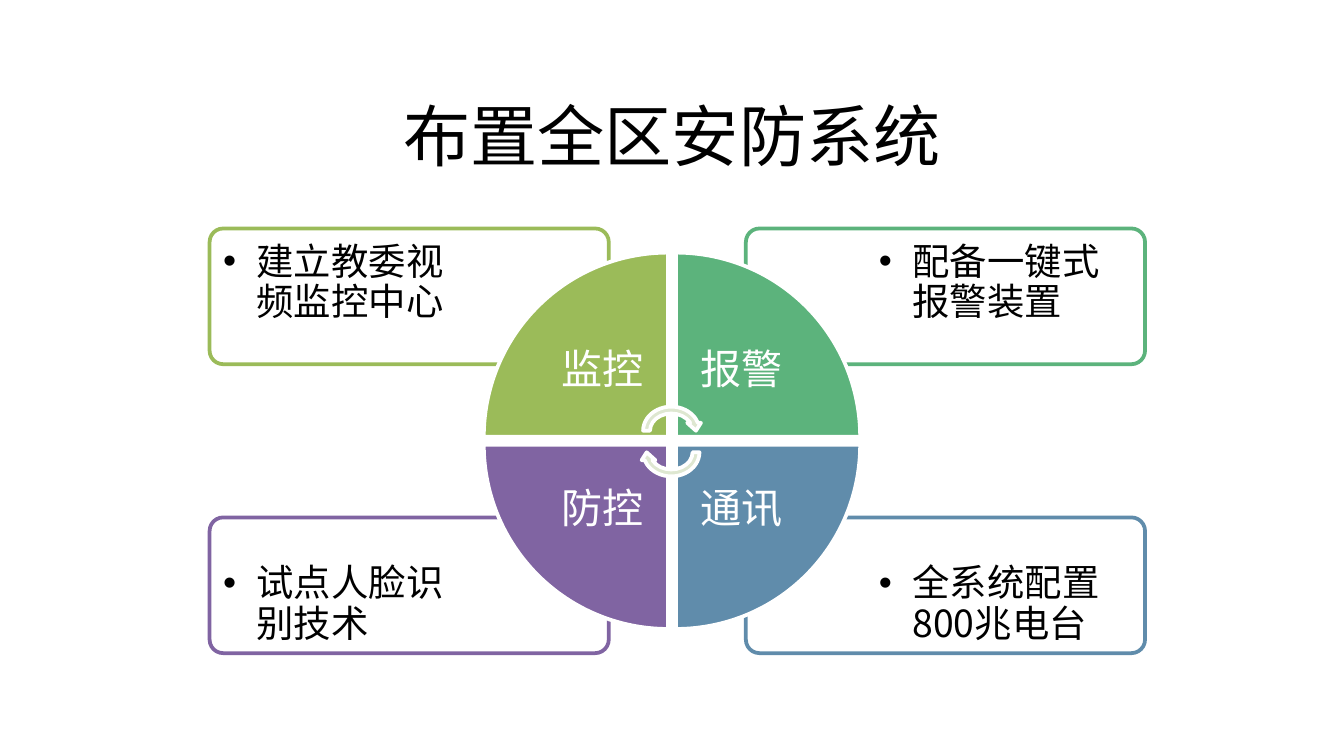
from lxml.etree import SubElement
from pptx import Presentation
from pptx.dml.color import RGBColor
from pptx.enum.shapes import MSO_SHAPE
from pptx.enum.text import MSO_ANCHOR, PP_ALIGN
from pptx.oxml.ns import qn
from pptx.util import Inches, Pt

COLORS = {
    "white": "FFFFFF", "black": "000000", "arrow": "DEE7D1",
    "green": "9BBB59", "teal": "5CB37C", "blue": "608CAB", "purple": "8064A2",
}
CJK_FONT = "Noto Sans CJK SC"
TITLE = "布置全区安防系统"
QUADRANTS = [
    {"label": "监控", "detail": "建立教委视频监控中心", "color": "green", "column": 0, "row": 0},
    {"label": "报警", "detail": "配备一键式报警装置", "color": "teal", "column": 1, "row": 0},
    {"label": "通讯", "detail": "全系统配置800兆电台", "color": "blue", "column": 1, "row": 1},
    {"label": "防控", "detail": "试点人脸识别技术", "color": "purple", "column": 0, "row": 1},
]
FORMATS = {
    "title": {"size": Pt(36), "name": CJK_FONT, "color": "black"},
    "detail": {"size": Pt(20), "name": CJK_FONT, "color": "black"},
    "label": {"size": Pt(22), "name": "Calibri", "color": "white"},
}
CARD = {"lefts": (1.56, 5.55), "tops": (1.7, 3.85), "size": (2.97, 1.01)}
DETAIL = {"lefts": (1.58, 6.46), "tops": (1.73, 4.12), "size": (2.03, 0.71)}
WEDGE = {"lefts": (3.6, 5.03), "tops": (1.88, 3.31), "size": (1.37, 1.37)}
LABEL = {"lefts": (4, 5.03), "tops": (2.28, 3.31), "size": (0.97, 0.97)}
ARROWS = [(3, 0), (3.16, 180)]


def rgb(name):
    return RGBColor.from_string(COLORS[name])


def place(grid, quadrant):
    position = (grid["lefts"][quadrant["column"]], grid["tops"][quadrant["row"]])
    return position + grid["size"]


def add_figure(page, kind, area, fill, line, rotation=0):
    shape = page.shapes.add_shape(kind, *map(Inches, area))
    shape.shadow.inherit = False
    shape.rotation = rotation
    shape.fill.solid()
    shape.fill.fore_color.rgb = rgb(fill)
    shape.line.color.rgb = rgb(line)
    shape.line.width = Pt(2)
    return shape


def add_text(page, text, area, style, inset, anchor, align, bullet=False):
    frame = page.shapes.add_textbox(*map(Inches, area)).text_frame
    frame.word_wrap = True
    frame.vertical_anchor = anchor
    for side in ("left", "right", "top", "bottom"):
        setattr(frame, f"margin_{side}", Inches(inset))
    para = frame.paragraphs[0]
    para.alignment = align
    if style != "title":
        para.line_spacing = 0.9
    if bullet:
        properties = para._p.get_or_add_pPr()
        properties.set("marL", str(Inches(0.25)))
        properties.set("indent", str(Inches(-0.25)))
        SubElement(properties, qn("a:buFont")).set("typeface", "Arial")
        SubElement(properties, qn("a:buChar")).set("char", "•")
    span = para.add_run()
    span.text = text
    values = FORMATS[style]
    for name in ("size", "name"):
        setattr(span.font, name, values[name])
    span.font.color.rgb = rgb(values["color"])
    SubElement(span._r.get_or_add_rPr(), qn("a:ea")).set("typeface", CJK_FONT)


deck = Presentation()
deck.slide_width = Inches(10)
deck.slide_height = deck.slide_width * 9 // 16
page = deck.slides.add_slide(deck.slide_layouts[6])

add_text(page, TITLE, (0.75, 0.69, 8.5, 0.63), "title", 0, MSO_ANCHOR.MIDDLE, PP_ALIGN.CENTER)

for quadrant in reversed(QUADRANTS):
    card = add_figure(page, MSO_SHAPE.ROUNDED_RECTANGLE, place(CARD, quadrant),
                      "white", quadrant["color"])
    card.adjustments[0] = 0.1
    fill_color = card._element.spPr.find(qn("a:solidFill"))[0]
    SubElement(fill_color, qn("a:alpha")).set("val", "90000")
    add_text(page, quadrant["detail"], place(DETAIL, quadrant), "detail", 0.08,
             MSO_ANCHOR.TOP, PP_ALIGN.LEFT, bullet=True)

for index, quadrant in enumerate(QUADRANTS):
    add_figure(page, MSO_SHAPE.PIE_WEDGE, place(WEDGE, quadrant),
               quadrant["color"], "white", 90 * index)
    add_text(page, quadrant["label"], place(LABEL, quadrant), "label", 0.17,
             MSO_ANCHOR.MIDDLE, PP_ALIGN.CENTER)

for top, rotation in ARROWS:
    add_figure(page, MSO_SHAPE.CIRCULAR_ARROW, (4.76, top, 0.47, 0.41), "arrow", "white", rotation)

deck.save("out.pptx")
